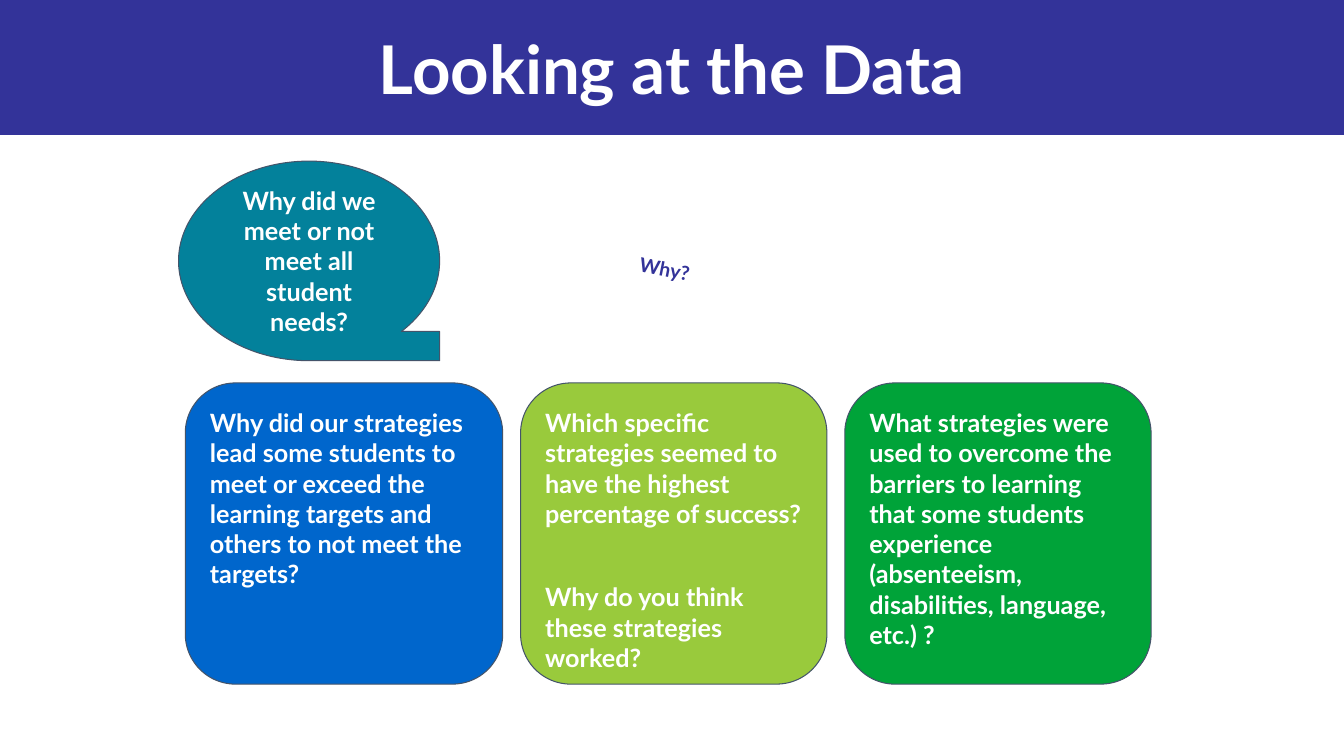
from dataclasses import dataclass

from pptx import Presentation
from pptx.dml.color import RGBColor
from pptx.enum.shapes import MSO_SHAPE as Preset
from pptx.enum.text import MSO_ANCHOR as Anchor, PP_ALIGN as Align
from pptx.util import Cm, Pt


@dataclass(frozen=True)
class Theme:
    font: str = "Lato"
    indigo: str = "333399"
    teal: str = "03819B"
    blue: str = "0066CC"
    lime: str = "99CA3C"
    green: str = "00A339"
    outline: str = "44546A"
    white: str = "FFFFFF"
    title_size: int = 48
    body_size: int = 18
    label_size: int = 14


THEME = Theme()
SLIDE_WIDTH, SLIDE_HEIGHT = 33.87, 19.05
HEADER_HEIGHT = 3.4
CARD_LEFT, CARD_TOP, CARD_HEIGHT, CARD_GAP = 4.67, 9.65, 7.59, 0.45

# Fill, width and paragraphs of each question card, left to right
CARDS = [
    (THEME.blue, 8.0, [
        "Why did our strategies lead some students to meet or exceed the "
        "learning targets and others to not meet the targets?"]),
    (THEME.lime, 7.72, [
        "Which specific strategies seemed to have the highest percentage "
        "of success?",
        "Why do you think these strategies worked?"]),
    (THEME.green, 7.72, [
        "What strategies were used to overcome the barriers to learning that "
        "some students experience (absenteeism, disabilities, language, "
        "etc.) ?"]),
]


def write_text(shape, paragraphs, size, color=THEME.white, align=Align.CENTER,
               anchor=Anchor.TOP, inset=0.25, gap=0):
    frame = shape.text_frame
    frame.word_wrap = True
    frame.vertical_anchor = anchor
    frame.margin_left = frame.margin_right = Cm(0.25)
    frame.margin_top = frame.margin_bottom = Cm(inset)
    for index, text in enumerate(paragraphs):
        paragraph = frame.add_paragraph() if index else frame.paragraphs[0]
        paragraph.alignment = align
        paragraph.space_before = Pt(gap if index else 0)
        run = paragraph.add_run()
        run.text = text
        run.font.name = THEME.font
        run.font.size = Pt(size)
        run.font.bold = True
        run.font.color.rgb = RGBColor.from_string(color)


def add_panel(slide, preset, box, fill, outline=None):
    shape = slide.shapes.add_shape(preset, *map(Cm, box))
    shape.shadow.inherit = False
    shape.fill.solid()
    shape.fill.fore_color.rgb = RGBColor.from_string(fill)
    if outline:
        shape.line.color.rgb = RGBColor.from_string(outline)
        shape.line.width = Pt(0.75)
    else:
        shape.line.fill.background()
    return shape


def add_header(slide, title):
    band = add_panel(slide, Preset.RECTANGLE,
                     (0, 0, SLIDE_WIDTH, HEADER_HEIGHT), THEME.indigo)
    write_text(band, [title], THEME.title_size, anchor=Anchor.MIDDLE,
               inset=0.13)


def add_bubble(slide, question):
    bubble = add_panel(slide, Preset.FLOWCHART_SEQUENTIAL_ACCESS_STORAGE,
                       (4.5, 4.06, 6.58, 5.03), THEME.teal, THEME.outline)
    write_text(bubble, [question], THEME.body_size, anchor=Anchor.MIDDLE)


def add_cards(slide):
    left = CARD_LEFT
    for fill, width, paragraphs in CARDS:
        card = add_panel(slide, Preset.ROUNDED_RECTANGLE,
                         (left, CARD_TOP, width, CARD_HEIGHT),
                         fill, THEME.outline)
        write_text(card, paragraphs, THEME.body_size, align=Align.LEFT, gap=38)
        left += width + CARD_GAP


def add_tilted_label(slide, text):
    label = slide.shapes.add_textbox(Cm(15.09), Cm(6.35), Cm(3.18), Cm(1.6))
    label.rotation = 11.1
    write_text(label, [text], THEME.label_size, THEME.indigo, inset=0.13)


def main():
    presentation = Presentation()
    presentation.slide_width = Cm(SLIDE_WIDTH)
    presentation.slide_height = Cm(SLIDE_HEIGHT)
    slide = presentation.slides.add_slide(presentation.slide_layouts[6])

    # Title band
    add_header(slide, "Looking at the Data")

    # Leading question and the cards below it
    add_bubble(slide, "Why did we meet or not meet all student needs?")
    add_cards(slide)

    # Tilted prompt
    add_tilted_label(slide, "Why?")

    presentation.save("out.pptx")


if __name__ == "__main__":
    main()
